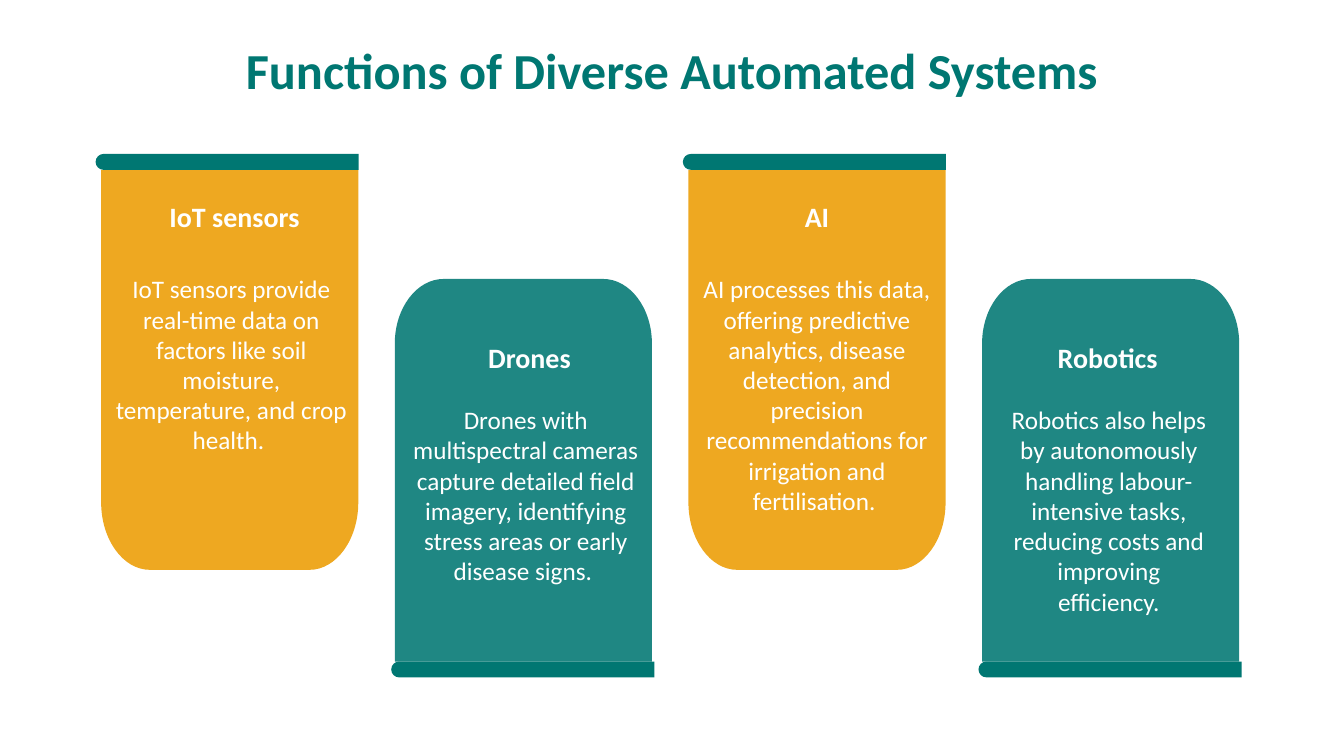
from dataclasses import dataclass

from lxml import etree
from pptx import Presentation
from pptx.dml.color import RGBColor
from pptx.enum import text as tx
from pptx.oxml import ns
from pptx.util import Cm, Pt

TEAL = RGBColor(0x00, 0x77, 0x72)
GOLD = RGBColor(0xEE, 0xA8, 0x21)
WHITE = RGBColor(0xFF, 0xFF, 0xFF)
FONT = "Calibri"

# Card grid, in centimetres
LEFT, PITCH, WIDE = 2.55, 7.4, 6.48
BAR_W, BAR_H = 6.63, 0.4
BEND = 0.55


@dataclass
class Box:
    left: float
    top: float
    width: float
    height: float


@dataclass
class Style:
    top: float
    height: float
    fill: RGBColor
    alpha: int
    ends: str
    rise: float
    bar_dx: float
    bar_top: float


@dataclass
class Card:
    style: Style
    name: str
    head: Box
    note: str
    body: Box


HIGH = Style(4.28, 10.08, GOLD, 100, "br bl", 1.7, -0.14, 3.88)
LOW = Style(7.03, 9.64, TEAL, 88, "tl tr", 1.63, -0.09, 16.67)

CARDS = [
    Card(HIGH, "IoT sensors", Box(2.72, 4.9, 6.38, 1.12),
         "IoT sensors provide real-time data on factors like soil moisture, "
         "temperature, and crop health. ", Box(2.64, 6.77, 6.38, 4.88)),
    Card(LOW, "Drones", Box(10.07, 8.46, 6.55, 1.12),
         "Drones with multispectral cameras capture detailed field imagery, "
         "identifying stress areas or early disease signs. ",
         Box(10.06, 10.07, 6.38, 4.88)),
    Card(HIGH, "AI", Box(17.35, 4.9, 6.48, 1.12),
         "AI processes this data, offering predictive analytics, disease "
         "detection, and precision recommendations for irrigation and "
         "fertilisation. ", Box(17.35, 6.77, 6.48, 6.4)),
    Card(LOW, "Robotics", Box(24.6, 8.46, 6.63, 1.12),
         "Robotics also helps by autonomously handling labour-intensive "
         "tasks, reducing costs and improving efficiency.",
         Box(25.1, 10.07, 5.69, 5.64)),
]


def outline(box: Box, ends: str, rx: float, ry: float) -> tuple:
    """Clockwise points, and the index at which each rounded corner starts."""
    right, base = box.left + box.width, box.top + box.height
    spots = [("tl", box.left, box.top, rx, ry),
             ("tr", right, box.top, -rx, ry),
             ("br", right, base, -rx, -ry),
             ("bl", box.left, base, rx, -ry)]
    points, starts = [], []
    for key, x, y, dx, dy in spots:
        if key not in ends.split():
            points.append((Cm(x), Cm(y)))
            continue
        starts.append(len(points))
        pull = 1 - BEND
        curve = [(x, y + dy), (x, y + dy * pull),
                 (x + dx * pull, y), (x + dx, y)]
        if key in ("tr", "bl"):
            curve.reverse()
        points += [(Cm(a), Cm(b)) for a, b in curve]
    return points, starts


def bend(shape, starts: list) -> None:
    """Turn the three lines of each rounded corner into one curve."""
    lines = list(shape.element.iter(ns.qn("a:lnTo")))
    for start in starts:
        trio = lines[start:start + 3]
        curve = etree.Element(ns.qn("a:cubicBezTo"))
        trio[0].addprevious(curve)
        for line in trio:
            curve.append(line[0])
            line.getparent().remove(line)


def add_panel(page, box: Box, ends: str, rx: float, ry: float,
              fill: RGBColor, alpha: int = 100) -> None:
    points, starts = outline(box, ends, rx, ry)
    form = page.shapes.build_freeform(*points[0])
    form.add_line_segments(points[1:], close=True)
    shape = form.convert_to_shape()
    bend(shape, starts)
    shape.shadow.inherit = False
    shape.fill.solid()
    shape.fill.fore_color.rgb = fill
    shape.line.fill.background()
    if alpha < 100:
        color = shape.element.spPr.find(".//" + ns.qn("a:srgbClr"))
        etree.SubElement(color, ns.qn("a:alpha"), val=str(alpha * 1000))


def add_run(para, words: str, size: int, color: RGBColor, bold: bool) -> None:
    para.alignment = tx.PP_ALIGN.CENTER
    run = para.add_run()
    run.text = words
    run.font.name = FONT
    run.font.size = Pt(size)
    run.font.bold = bold
    run.font.color.rgb = color


def add_label(page, box: Box, words: str, size: int, bold: bool) -> None:
    label = page.shapes.add_textbox(Cm(box.left), Cm(box.top),
                                    Cm(box.width), Cm(box.height))
    frame = label.text_frame
    frame.word_wrap = True
    frame.auto_size = tx.MSO_AUTO_SIZE.SHAPE_TO_FIT_TEXT
    add_run(frame.paragraphs[0], words, size, WHITE, bold)


def add_title(page, words: str) -> None:
    title = page.shapes.title
    title.left, title.top = Cm(0), Cm(1.04)
    title.width, title.height = Cm(33.87), Cm(2.24)
    frame = title.text_frame
    frame.word_wrap = True
    frame.auto_size = tx.MSO_AUTO_SIZE.NONE
    frame.vertical_anchor = tx.MSO_ANCHOR.TOP
    para = frame.paragraphs[0]
    para.line_spacing = 0.9
    para.space_before = Pt(0)
    add_run(para, words, 36, TEAL, True)


def add_card(page, card: Card, left: float) -> None:
    style = card.style
    # Panel and its bar
    add_panel(page, Box(left, style.top, WIDE, style.height), style.ends,
              1.23, style.rise, style.fill, style.alpha)
    add_panel(page, Box(left + style.bar_dx, style.bar_top, BAR_W, BAR_H),
              "tl bl", BAR_H / 2, BAR_H / 2, TEAL)
    # Heading and text
    add_label(page, card.head, card.name, 20, True)
    add_label(page, card.body, card.note, 18, False)


def main() -> None:
    deck = Presentation()
    deck.slide_width, deck.slide_height = Cm(33.87), Cm(19.05)
    page = deck.slides.add_slide(deck.slide_layouts[5])
    add_title(page, "Functions of Diverse Automated Systems")
    for index, card in enumerate(CARDS):
        add_card(page, card, LEFT + index * PITCH)
    deck.save("out.pptx")


if __name__ == "__main__":
    main()
